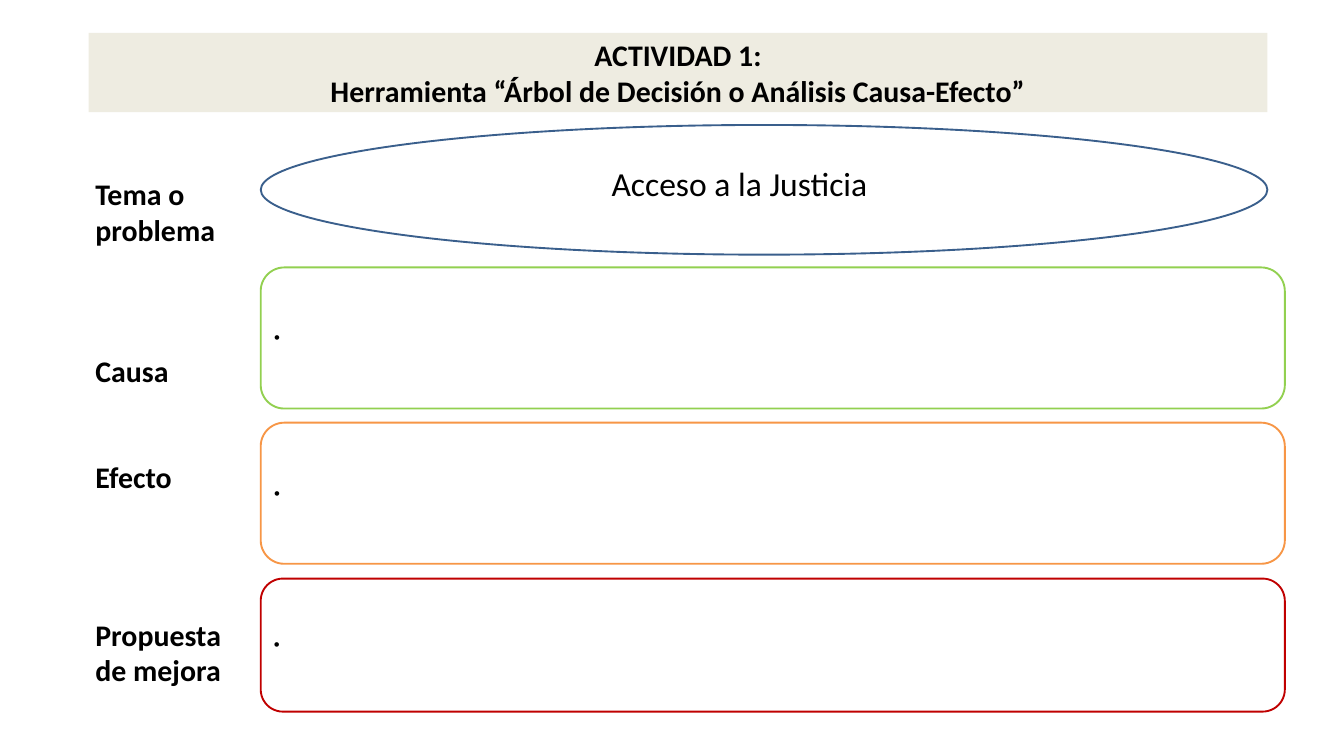
from typing import NamedTuple

from lxml.etree import SubElement
from pptx import Presentation
from pptx.dml.color import RGBColor
from pptx.enum.shapes import MSO_SHAPE as Preset
from pptx.enum.text import MSO_ANCHOR as Anchor, MSO_AUTO_SIZE as AutoSize, PP_ALIGN as Align
from pptx.oxml.ns import qn
from pptx.util import Inches, Pt

FONT = "Calibri"
BLACK = "000000"
LEFT = 1.32
FIELD_LEFT = 3.88
FIELD_WIDTH = 15.24


class Label(NamedTuple):
    text: str
    top: float
    width: float
    height: float
    wrap: bool = False


class Field(NamedTuple):
    top: float
    height: float
    color: str


LABELS = [
    Label("Tema o\nproblema", 2.56, 2, 1.18),
    Label("Causa", 5.2, 2.25, 0.64, True),
    Label("Efecto", 6.78, 1.35, 0.64),
    Label("Propuesta\nde mejora", 9.12, 2.19, 1.18),
]
FIELDS = [
    Field(3.98, 2.1, "92D050"),
    Field(6.29, 2.1, "F79646"),
    Field(8.61, 1.98, "C00000"),
]


def rgb(color: str) -> RGBColor:
    return RGBColor.from_string(color)


def write(frame, text: str, size: float, bold: bool, align: Align, wrap: bool = True) -> None:
    frame.text = text
    frame.word_wrap = wrap
    frame.auto_size = AutoSize.SHAPE_TO_FIT_TEXT
    for paragraph in frame.paragraphs:
        paragraph.alignment = align
        for run in paragraph.runs:
            run.font.name = FONT
            run.font.size = Pt(size)
            run.font.bold = bold
            run.font.color.rgb = rgb(BLACK)


def add_outline(slide, preset: Preset, left: float, top: float, width: float, height: float, color: str):
    outline = slide.shapes.add_shape(preset, Inches(left), Inches(top), Inches(width), Inches(height))
    outline.shadow.inherit = False
    outline.fill.background()
    outline.line.color.rgb = rgb(color)
    outline.line.width = Pt(2)
    return outline


def add_label(slide, label: Label) -> None:
    box = slide.shapes.add_textbox(Inches(LEFT), Inches(label.top), Inches(label.width), Inches(label.height))
    write(box.text_frame, label.text, 32, True, Align.LEFT, label.wrap)


def add_field(slide, field: Field) -> None:
    outline = add_outline(slide, Preset.ROUNDED_RECTANGLE, FIELD_LEFT, field.top, FIELD_WIDTH, field.height, field.color)
    frame = outline.text_frame
    write(frame, " ", 18, False, Align.LEFT)
    frame.auto_size = AutoSize.NONE
    frame.vertical_anchor = Anchor.MIDDLE
    properties = frame.paragraphs[0]._p.get_or_add_pPr()
    properties.set("marL", str(Inches(0.3)))
    properties.set("indent", str(-Inches(0.3)))
    SubElement(properties, qn("a:buFont")).set("typeface", "Arial")
    SubElement(properties, qn("a:buChar")).set("char", "•")


def main() -> None:
    deck = Presentation()
    deck.slide_width, deck.slide_height = Inches(20), Inches(11.25)
    slide = deck.slides.add_slide(deck.slide_layouts[5])

    heading = slide.shapes.title
    heading.left, heading.top = Inches(LEFT), Inches(0.49)
    heading.width, heading.height = Inches(17.54), Inches(1.18)
    heading.fill.solid()
    heading.fill.fore_color.rgb = rgb("EEECE1")
    write(heading.text_frame, "ACTIVIDAD 1:\nHerramienta “Árbol de Decisión o Análisis Causa-Efecto”", 32, True, Align.CENTER)

    add_outline(slide, Preset.OVAL, FIELD_LEFT, 1.86, 14.98, 1.93, "3A5F8C")
    for label in LABELS:
        add_label(slide, label)
    for field in FIELDS:
        add_field(slide, field)

    topic = slide.shapes.add_textbox(Inches(5.74), Inches(2.38), Inches(10.53), Inches(0.71))
    write(topic.text_frame, "Acceso a la Justicia", 36, False, Align.CENTER)

    deck.save("out.pptx")


if __name__ == "__main__":
    main()
